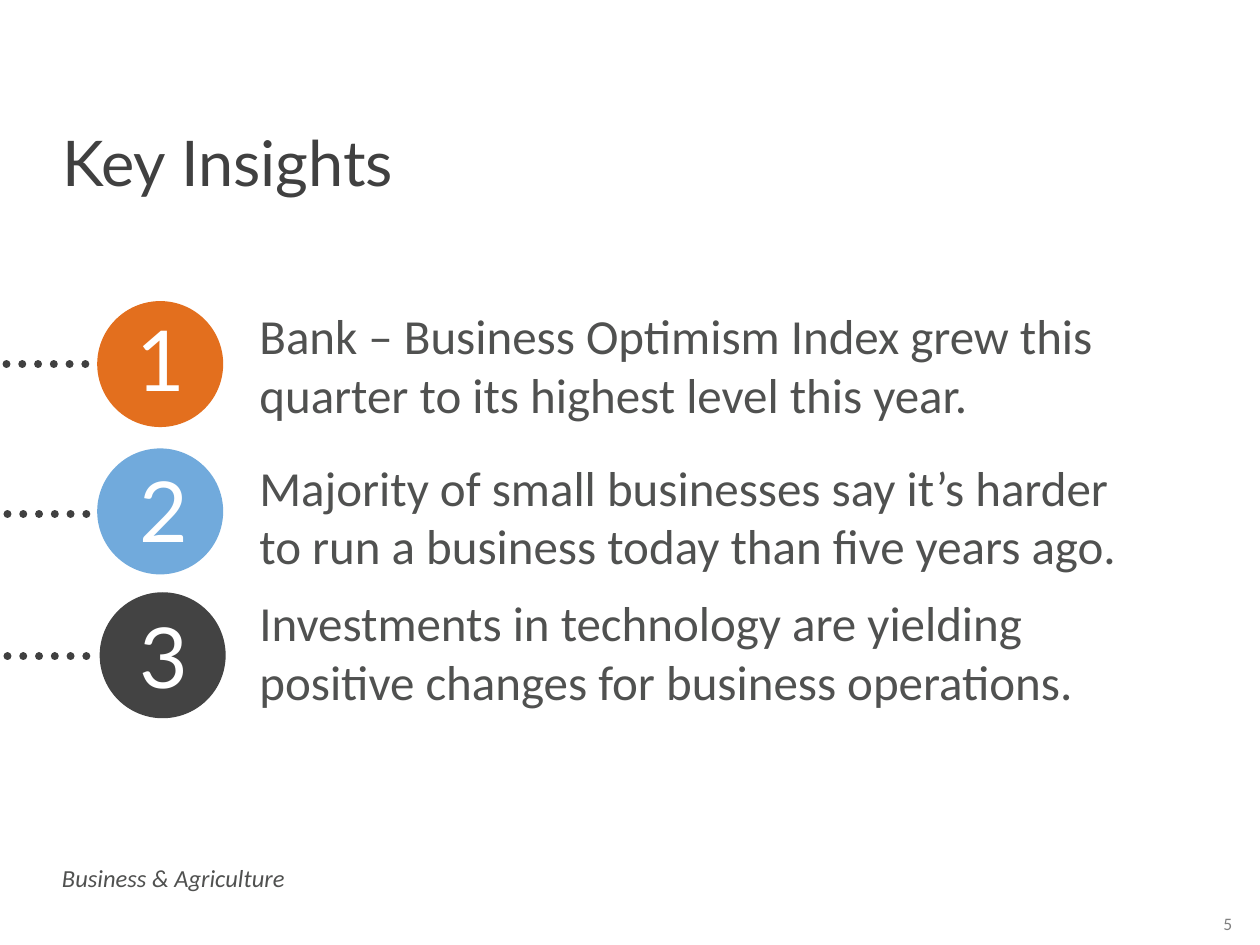
import pptx
import pptx.util
import pptx.dml.color
import pptx.enum.dml
import pptx.enum.shapes
import pptx.enum.text
import pptx.oxml.ns
from dataclasses import dataclass
from lxml import etree
from pptx.util import Cm

ALIGN = pptx.enum.text.PP_ALIGN
ANCHOR = pptx.enum.text.MSO_ANCHOR
SHAPES = pptx.enum.shapes
COLORS = {
    "orange": "E36F1E",
    "blue": "71AADC",
    "dark": "434343",
    "title": "404040",
    "text": "505150",
    "page": "808080",
    "white": "FFFFFF",
}
DISC = 2.54


@dataclass
class Style:
    font: str
    size: int
    color: str
    italic: bool = False
    align: ALIGN = ALIGN.LEFT


@dataclass
class Insight:
    label: str
    text: str
    color: str
    disc: tuple[float, float]
    digit: tuple[float, float]
    dots: tuple[float, float]
    top: float
    width: float


BODY = Style("Calibri", 28, "text")
DIGIT = Style("Lato", 48, "white", align=ALIGN.CENTER)
ITEMS = [
    Insight("1", "Bank – Business Optimism Index grew this quarter to its highest level this year.",
            "orange", (1.96, 6.07), (1.88, 6.07), (0.13, 7.34), 6.5, 18.57),
    Insight("2", "Majority of small businesses say it’s harder to run a business today than five years ago.",
            "blue", (1.96, 9.04), (1.93, 9.12), (0.15, 10.36), 9.55, 18.34),
    Insight("3", "Investments in technology are yielding positive changes for business operations.",
            "dark", (2.01, 11.94), (1.93, 12.07), (0.15, 13.23), 12.29, 18.57),
]


def rgb(name: str) -> pptx.dml.color.RGBColor:
    return pptx.dml.color.RGBColor.from_string(COLORS[name])


def write(frame, text: str, style: Style) -> None:
    frame.word_wrap = True
    para = frame.paragraphs[0]
    para.alignment = style.align
    run = para.add_run()
    run.text = text
    run.font.name = style.font
    run.font.size = pptx.util.Pt(style.size)
    run.font.italic = style.italic
    run.font.color.rgb = rgb(style.color)


def label(slide, x: float, y: float, w: float, h: float, text: str, style: Style):
    frame = slide.shapes.add_textbox(Cm(x), Cm(y), Cm(w), Cm(h)).text_frame
    write(frame, text, style)
    return frame


def dotted(slide, x: float, y: float) -> None:
    line = slide.shapes.add_connector(
        SHAPES.MSO_CONNECTOR.STRAIGHT, Cm(x), Cm(y), Cm(x + 1.9), Cm(y))
    line.line.color.rgb = rgb("title")
    line.line.width = pptx.util.Pt(4.5)
    line.line.dash_style = pptx.enum.dml.MSO_LINE.ROUND_DOT
    line.line._ln.set("cap", "rnd")
    props = line._element.spPr
    etree.SubElement(props, pptx.oxml.ns.qn("a:effectLst"))


def disc(slide, x: float, y: float, color: str) -> None:
    oval = slide.shapes.add_shape(
        SHAPES.MSO_SHAPE.OVAL, Cm(x), Cm(y), Cm(DISC), Cm(DISC))
    oval.shadow.inherit = False
    oval.fill.solid()
    oval.fill.fore_color.rgb = rgb(color)
    oval.line.fill.background()


def insight(slide, item: Insight) -> None:
    frame = label(slide, 5.13, item.top, item.width, 1.6, item.text, BODY)
    frame.vertical_anchor = ANCHOR.MIDDLE
    frame.margin_left = frame.margin_top = frame.margin_right = Cm(0.1)
    frame.margin_bottom = 0
    dotted(slide, *item.dots)
    disc(slide, *item.disc, item.color)
    label(slide, *item.digit, 2.74, 2.31, item.label, DIGIT)


def main() -> None:
    deck = pptx.Presentation()
    deck.slide_width, deck.slide_height = Cm(25.4), Cm(19.05)
    slide = deck.slides.add_slide(deck.slide_layouts[5])

    # Title
    title = slide.shapes.title
    title.left, title.top, title.width, title.height = Cm(1), Cm(2.54), Cm(11.07), Cm(1.73)
    title.text_frame.vertical_anchor = ANCHOR.TOP
    write(title.text_frame, "Key Insights", Style("Lato", 36, "title"))
    title.text_frame.paragraphs[0].line_spacing = 0.9

    # Numbered insights
    for item in ITEMS:
        insight(slide, item)

    # Footer and page number
    label(slide, 1, 17.27, 7.14, 0.86, "Business & Agriculture",
          Style("Calibri", 14, "text", italic=True))
    label(slide, 24.13, 18.29, 1.24, 0.69, "5",
          Style("Calibri", 10, "page", align=ALIGN.CENTER))

    deck.save("out.pptx")


if __name__ == "__main__":
    main()
